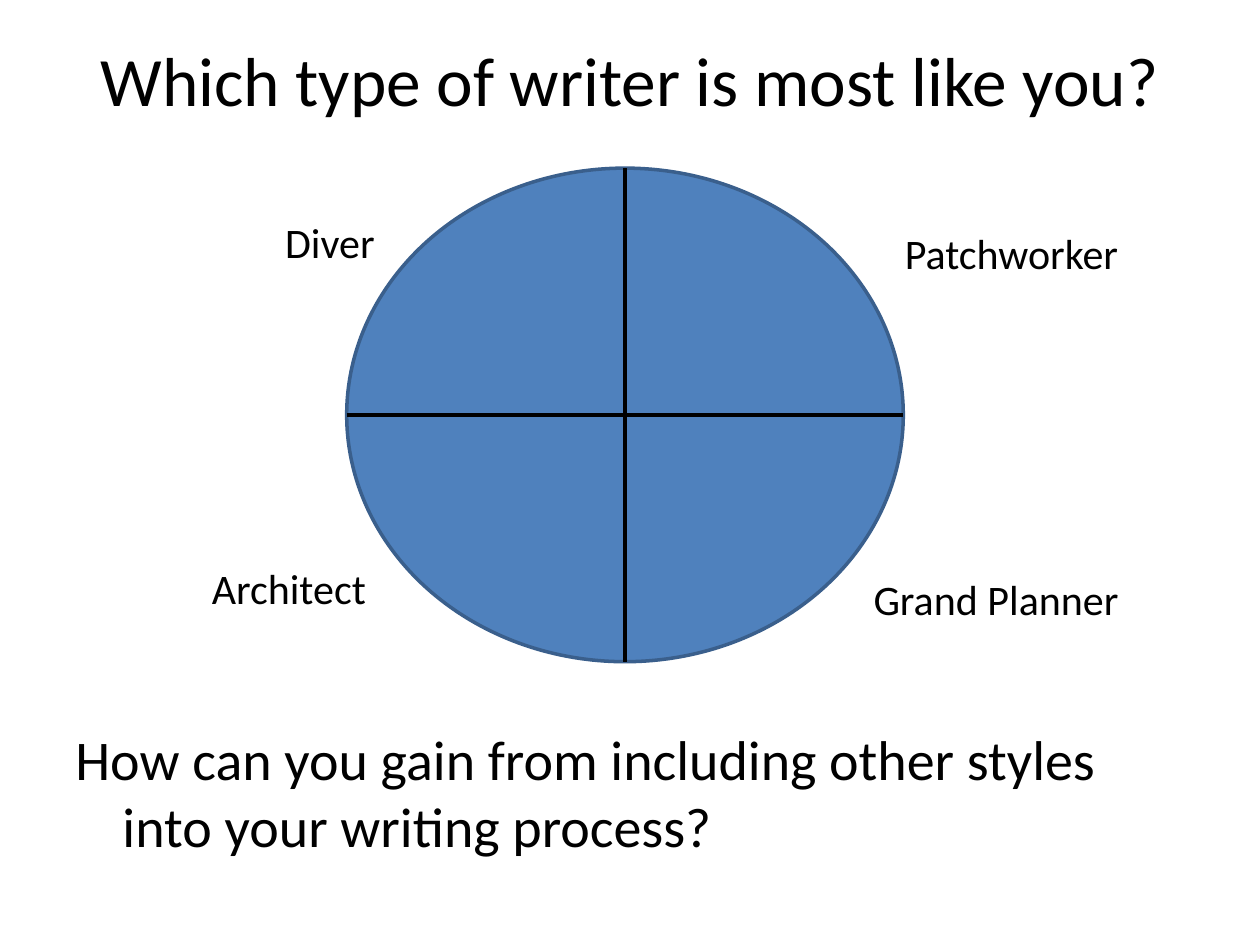
from pptx import Presentation
from pptx.dml.color import RGBColor
from pptx.enum.shapes import MSO_CONNECTOR, MSO_SHAPE
from pptx.enum.text import PP_ALIGN
from pptx.oxml.ns import qn
from pptx.util import Cm, Pt
from lxml import etree

BLACK = RGBColor(0x00, 0x00, 0x00)
BLUE = RGBColor(0x4F, 0x81, 0xBD)
DARK_BLUE = RGBColor(0x3A, 0x5F, 0x8C)


def add_text(text, x, y, w, h, size=24, align=PP_ALIGN.LEFT, top=0.13, hanging=0):
    """Add a text box; places, top inset and hanging indent are in centimetres."""
    tf = s.shapes.add_textbox(Cm(x), Cm(y), Cm(w), Cm(h)).text_frame
    tf.word_wrap = True
    tf.margin_top = Cm(top)
    p = tf.paragraphs[0]
    p.alignment = align
    if hanging:
        pPr = p._p.get_or_add_pPr()
        pPr.set("marL", str(Cm(hanging)))
        pPr.set("indent", str(-Cm(hanging)))
    r = p.add_run()
    r.text = text
    r.font.name = "Calibri"
    r.font.size = Pt(size)
    r.font.color.rgb = BLACK


def add_divider(x1, y1, x2, y2, width):
    line = s.shapes.add_connector(MSO_CONNECTOR.STRAIGHT, Cm(x1), Cm(y1), Cm(x2), Cm(y2))
    line.line.color.rgb = BLACK
    line.line.width = Pt(width)
    etree.SubElement(line._element.spPr, qn("a:effectLst"))


prs = Presentation()
prs.slide_width = Cm(25.4)
prs.slide_height = Cm(19.05)
s = prs.slides.add_slide(prs.slide_layouts[6])

add_text("Which type of writer is most like you?", 1.27, 0.76, 22.86, 3.18,
         size=39.6, align=PP_ALIGN.CENTER, top=0)
add_text("How can you gain from including other styles into your writing process?",
         1.27, 14.4, 22.86, 3.68, size=32, top=0.2, hanging=0.95)

# Circle split into four quarters
left, top, width, height = 6.99, 3.39, 11.22, 9.95
sp = s.shapes.add_shape(MSO_SHAPE.OVAL, Cm(left), Cm(top), Cm(width), Cm(height))
sp.shadow.inherit = False
sp.fill.solid()
sp.fill.fore_color.rgb = BLUE
sp.line.color.rgb = DARK_BLUE
sp.line.width = Pt(2)

mid_x, mid_y = left + width / 2, top + height / 2
add_divider(left, mid_y, left + width, mid_y, 2.75)
add_divider(mid_x, top, mid_x, top + height, 2.25)

for writer, x, y, w in [
    ("Diver", 5.5, 4.23, 2.33),
    ("Architect", 4.02, 11.22, 3.81),
    ("Grand Planner", 17.36, 11.43, 5.93),
    ("Patchworker", 17.99, 4.45, 5.08),
]:
    add_text(writer, x, y, w, 1.28)

prs.save("out.pptx")
